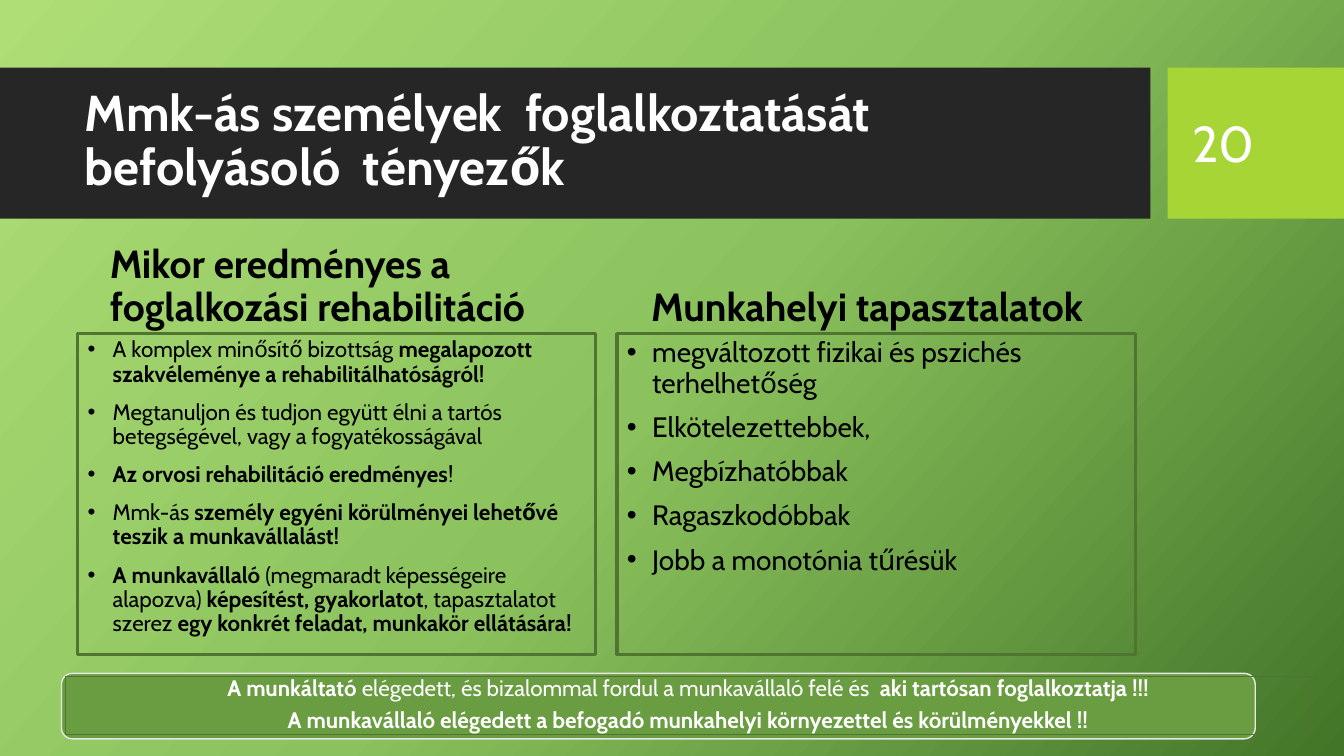
from pptx import Presentation
from pptx.dml.color import RGBColor
from pptx.enum.shapes import MSO_SHAPE
from pptx.enum.text import MSO_ANCHOR, PP_ALIGN
from pptx.oxml.ns import qn
from pptx.util import Pt
from lxml import etree
from copy import deepcopy
from dataclasses import dataclass

RECTANGLE, ROUNDED = MSO_SHAPE.RECTANGLE, MSO_SHAPE.ROUNDED_RECTANGLE
TOP, MIDDLE, BOTTOM = MSO_ANCHOR.TOP, MSO_ANCHOR.MIDDLE, MSO_ANCHOR.BOTTOM
CENTER = PP_ALIGN.CENTER

# Text between ** marks is bold.
TITLE = "**Mmk-ás személyek  foglalkoztatását befolyásoló  tényezők**"
SLIDE_NUMBER = "20"
COLUMNS = [
    {
        "heading": "**Mikor eredményes a foglalkozási rehabilitáció**",
        "heading_left": 99, "box_left": 77, "size": 16,
        "items": [
            "A komplex minősítő bizottság **megalapozott szakvéleménye a rehabilitálhatóságról!**",
            "Megtanuljon és tudjon együtt élni a tartós betegségével, vagy a fogyatékosságával",
            "**Az orvosi rehabilitáció eredményes**!",
            "Mmk-ás **személy egyéni körülményei lehetővé teszik a munkavállalást!**",
            "**A munkavállaló** (megmaradt képességeire alapozva) **képesítést, gyakorlatot**"
            ", tapasztalatot szerez **egy konkrét feladat, munkakör ellátására!**",
        ],
    },
    {
        "heading": "**Munkahelyi tapasztalatok**",
        "heading_left": 636, "box_left": 612, "size": 20,
        "items": [
            "megváltozott fizikai és pszichés terhelhetőség",
            "Elkötelezettebbek,",
            "Megbízhatóbbak",
            "Ragaszkodóbbak",
            "Jobb a monotónia tűrésük",
        ],
    },
]
CONCLUSIONS = [
    "**A munkáltató **elégedett, és bizalommal fordul a munkavállaló felé és  "
    "**aki tartósan foglalkoztatja !!!**",
    "**A munkavállaló elégedett a befogadó munkahelyi környezettel és körülményekkel !!**",
]


@dataclass(frozen=True)
class Theme:
    font: str = "Cabin"
    background: tuple = ((0, "AFDE77"), (0.5, "8BC25D"), (1, "437528"))
    band: str = "262626"
    accent: str = "A7D535"
    border: str = "507531"
    footer: str = "6A9C41"
    footer_border: str = "E7E6E6"
    light: str = "FFFFFF"
    dark: str = "000000"
    title_size: int = 36
    heading_size: int = 28
    footer_size: int = 16


THEME = Theme()
PX = 9144  # 100 px to the inch
BULLET_INDENT = 25


def color(value):
    return RGBColor.from_string(value)


def paint_background(slide):
    fill = slide.background.fill
    fill.gradient()
    fill.gradient_angle = 360 - 42
    stop_list = next(slide.element.iter(qn("a:gsLst")))
    stop_list.append(deepcopy(stop_list[-1]))
    for stop, (position, value) in zip(fill.gradient_stops, THEME.background):
        stop.position = position
        stop.color.rgb = color(value)


def add_box(shapes, kind, place, fill=None, line=None, line_width=1):
    shape = shapes.add_shape(kind, *(length * PX for length in place))
    shape.shadow.inherit = False
    if fill:
        shape.fill.solid()
        shape.fill.fore_color.rgb = color(fill)
    else:
        shape.fill.background()
    if line:
        shape.line.color.rgb = color(line)
        shape.line.width = Pt(line_width)
    else:
        shape.line.fill.background()
    return shape


def add_bullet(paragraph):
    properties = paragraph._p.get_or_add_pPr()
    properties.set("marL", str(BULLET_INDENT * PX))
    properties.set("indent", str(-BULLET_INDENT * PX))
    etree.SubElement(properties, qn("a:buFont")).set("typeface", "Arial")
    etree.SubElement(properties, qn("a:buChar")).set("char", "•")


def write(shape, lines, size, text_color, anchor=MIDDLE, align=PP_ALIGN.LEFT,
          gap=0, spacing=0.9, bulleted=False, insets=(10, 5)):
    """Fill a shape with paragraphs, gap points apart; ** switches bold."""
    frame = shape.text_frame
    side, edge = (inset * PX for inset in insets)
    frame_format = {"word_wrap": True, "vertical_anchor": anchor,
                    "margin_left": side, "margin_right": side,
                    "margin_top": edge, "margin_bottom": edge}
    for name, value in frame_format.items():
        setattr(frame, name, value)
    for index, line in enumerate(lines):
        paragraph = frame.add_paragraph() if index else frame.paragraphs[0]
        if bulleted:
            add_bullet(paragraph)
        paragraph_format = {"alignment": align, "line_spacing": spacing,
                            "space_before": Pt(gap if index else 0)}
        for name, value in paragraph_format.items():
            setattr(paragraph, name, value)
        for part, text in enumerate(line.split("**")):
            if not text:
                continue
            run = paragraph.add_run()
            run.text = text
            font_format = {"name": THEME.font, "size": Pt(size), "bold": part % 2 == 1}
            for name, value in font_format.items():
                setattr(run.font, name, value)
            run.font.color.rgb = color(text_color)


def add_text(shapes, place, lines, size, text_color, **options):
    text_box = shapes.add_textbox(*(length * PX for length in place))
    write(text_box, lines, size, text_color, **options)


def add_column(shapes, column):
    add_text(shapes, (column["heading_left"], 256, 489, 76), [column["heading"]],
             THEME.heading_size, THEME.dark, anchor=BOTTOM)
    box = add_box(shapes, RECTANGLE, (column["box_left"], 331, 514, 318),
                  line=THEME.border, line_width=2.25)
    write(box, column["items"], column["size"], THEME.dark, anchor=TOP,
          gap=10, bulleted=True)


def add_footer(shapes):
    group = shapes.add_group_shape()
    add_box(group.shapes, ROUNDED, (61, 668, 1184, 65),
            THEME.footer, THEME.footer_border)
    label = add_box(group.shapes, RECTANGLE, (65, 671, 1235, 58),
                    line=THEME.border, line_width=0.75)
    write(label, CONCLUSIONS, THEME.footer_size, THEME.light, align=CENTER,
          gap=5.6, insets=(28, 0))


def main():
    presentation = Presentation()
    presentation.slide_width, presentation.slide_height = 1333 * PX, 750 * PX
    slide = presentation.slides.add_slide(presentation.slide_layouts[6])
    shapes = slide.shapes
    paint_background(slide)
    add_box(shapes, RECTANGLE, (0, 67, 1141, 150), THEME.band)
    add_box(shapes, RECTANGLE, (1158, 67, 175, 150), THEME.accent)
    add_text(shapes, (74, 82, 1051, 118), [TITLE], THEME.title_size, THEME.light)
    for column in COLUMNS:
        add_column(shapes, column)
    add_text(shapes, (1173, 82, 126, 119), [SLIDE_NUMBER], THEME.title_size,
             THEME.light, spacing=1.0)
    add_footer(shapes)
    presentation.save("out.pptx")


if __name__ == "__main__":
    main()
